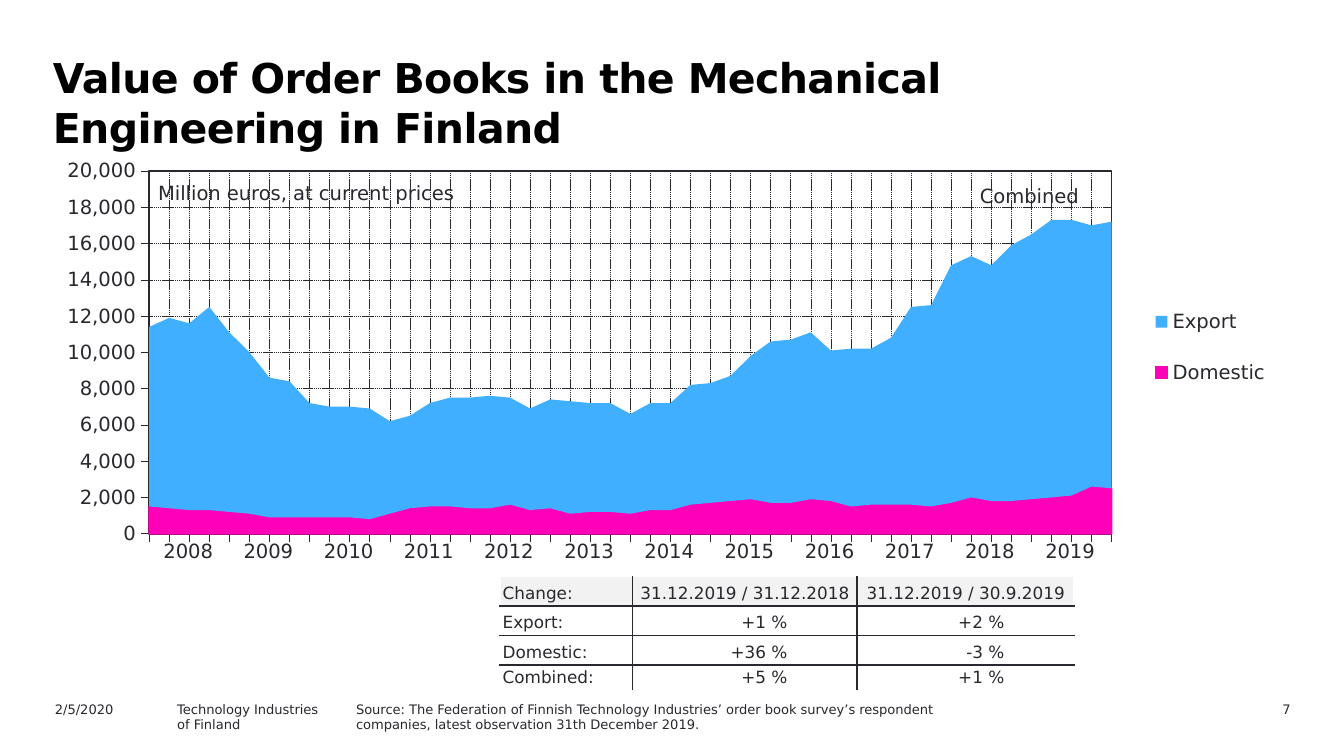
"""Build the slide on order books in Finnish mechanical engineering."""
from dataclasses import dataclass

import lxml.etree
import pptx
import pptx.chart.data
import pptx.dml.color
import pptx.enum.chart
import pptx.enum.dml
import pptx.enum.text
import pptx.oxml
import pptx.oxml.ns
import pptx.util

Cm = pptx.util.Cm
Pt = pptx.util.Pt
qn = pptx.oxml.ns.qn
ALIGN = pptx.enum.text.PP_ALIGN
ANCHOR = pptx.enum.text.MSO_ANCHOR
CHART = pptx.enum.chart


@dataclass(frozen=True)
class Theme:
    font: str = "DejaVu Sans"
    title: str = "000000"
    ink: str = "29282E"
    paper: str = "FFFFFF"
    header: str = "F2F2F2"
    domestic: str = "FF00B8"
    export: str = "40AFFF"
    title_size: float = 22
    label_size: float = 10.5
    table_size: float = 9
    footer_size: float = 7


THEME = Theme()
PLAIN_TABLE = "{2D5ABB26-0587-4C30-8999-92F81FD0307C}"
DOMESTIC = (
    1500, 1400, 1300, 1300, 1200, 1100, 900, 900, 900, 900, 900, 800, 1100,
    1400, 1500, 1500, 1400, 1400, 1600, 1300, 1400, 1100, 1200, 1200, 1100,
    1300, 1300, 1600, 1700, 1800, 1900, 1700, 1700, 1900, 1800, 1500, 1600,
    1600, 1600, 1500, 1700, 2000, 1800, 1800, 1900, 2000, 2100, 2600, 2500,
)
EXPORT = (
    9900, 10500, 10300, 11200, 9900, 8900, 7700, 7500, 6300, 6100, 6100, 6100,
    5100, 5100, 5700, 6000, 6100, 6200, 5900, 5600, 6000, 6200, 6000, 6000,
    5500, 5900, 5900, 6600, 6600, 6900, 7900, 8900, 9000, 9200, 8300, 8700,
    8600, 9200, 10900, 11100, 13100, 13300, 13000, 14100, 14600, 15300, 15200,
    14400, 14700,
)
CHANGES = (
    ("Change:", "31.12.2019 / 31.12.2018", "31.12.2019 / 30.9.2019"),
    ("Export:", "+1 %", "+2 %"),
    ("Domestic:", "+36 %", "-3 %"),
    ("Combined:", "+5 %", "+1 %"),
)


def assign(target, formats):
    for name, value in formats.items():
        setattr(target, name, value)


def rgb(color):
    return pptx.dml.color.RGBColor.from_string(color)


def style_font(font, size, color=THEME.ink, bold=False):
    assign(font, {"name": THEME.font, "size": Pt(size), "bold": bold})
    font.color.rgb = rgb(color)


def style_line(line, width, color=THEME.ink, dash=None):
    line.color.rgb = rgb(color)
    assign(line, {"width": Pt(width), "dash_style": dash})


def add_text(page, place, lines, size, color=THEME.ink, bold=False,
             spacing=0, wrap=True, **formats):
    box = page.shapes.add_textbox(*map(Cm, place))
    frame = box.text_frame
    frame.word_wrap = wrap
    for number, line in enumerate(lines):
        para = frame.add_paragraph() if number else frame.paragraphs[0]
        assign(para, formats)
        span = para.add_run()
        span.text = line
        style_font(span.font, size, color, bold)
        if spacing:
            span.font._element.set("spc", str(spacing))


def set_layout(parent, position, **fractions):
    for old in parent.findall(qn("c:layout")):
        parent.remove(old)
    layout = lxml.etree.Element(qn("c:layout"))
    manual = lxml.etree.SubElement(layout, qn("c:manualLayout"))
    values = {"xMode": "edge", "yMode": "edge", **fractions}
    if position == 0:
        values = {"layoutTarget": "inner", **values}
    for name, value in values.items():
        lxml.etree.SubElement(manual, qn(f"c:{name}")).set("val", str(value))
    parent.insert(position, layout)


def style_axis(axis):
    assign(axis, {"has_major_gridlines": True,
                  "major_tick_mark": CHART.XL_TICK_MARK.OUTSIDE,
                  "minor_tick_mark": CHART.XL_TICK_MARK.NONE})
    style_line(axis.format.line, 0.22)
    style_line(axis.major_gridlines.format.line, 0.25,
               dash=pptx.enum.dml.MSO_LINE.SQUARE_DOT)


def frame_plot(plot_area):
    plot_area.append(pptx.oxml.parse_xml(
        f'<c:spPr {pptx.oxml.ns.nsdecls("c", "a")}><a:noFill/>'
        f'<a:ln w="12700"><a:solidFill><a:srgbClr val="{THEME.ink}"/>'
        '</a:solidFill></a:ln></c:spPr>'))


def add_order_chart(page):
    data = pptx.chart.data.CategoryChartData()
    data.categories = [str(quarter + 1) for quarter in range(len(EXPORT))]
    data.add_series("Domestic", DOMESTIC)
    data.add_series("Export", EXPORT)
    chart = page.shapes.add_chart(
        CHART.XL_CHART_TYPE.AREA_STACKED,
        *map(Cm, (1.07, 3, 23.32, 7.75)), data).chart
    assign(chart, {"has_title": False, "has_legend": True})
    style_font(chart.font, THEME.label_size)
    chart.plots[0].vary_by_categories = False
    for series, color in zip(chart.plots[0].series,
                             (THEME.domestic, THEME.export)):
        series.format.fill.solid()
        series.format.fill.fore_color.rgb = rgb(color)
    style_line(chart.plots[0].series[0].format.line, 0.88, THEME.domestic)
    for axis in (chart.category_axis, chart.value_axis):
        style_axis(axis)
    chart.category_axis.tick_label_position = CHART.XL_TICK_LABEL_POSITION.NONE
    assign(chart.value_axis, {"minimum_scale": 0, "maximum_scale": 20000,
                              "major_unit": 2000})
    labels = chart.value_axis.tick_labels
    assign(labels, {"number_format": "#,##0", "number_format_is_linked": False})
    style_font(labels.font, THEME.label_size)
    assign(chart.legend, {"position": CHART.XL_LEGEND_POSITION.RIGHT,
                          "include_in_layout": False})
    style_font(chart.legend.font, THEME.label_size)
    plot_area = chart._chartSpace.chart.plotArea
    for crossing in plot_area.iter(qn("c:crossBetween")):
        crossing.set("val", "midCat")
    set_layout(plot_area, 0, x=0.075, y=0.03, w=0.78, h=0.885)
    set_layout(chart.legend._element, 1, x=0.87, y=0.3, w=0.13, h=0.32)
    frame_plot(plot_area)


def add_plain_table(page, left, top, widths, heights):
    table = page.shapes.add_table(
        len(heights), len(widths), Cm(left), Cm(top),
        Cm(sum(widths)), Cm(sum(heights))).table
    assign(table, {"first_row": False, "horz_banding": False})
    table._tbl.tblPr.find(qn("a:tableStyleId")).text = PLAIN_TABLE
    for column, width in zip(table.columns, widths):
        column.width = Cm(width)
    for row, height in zip(table.rows, heights):
        row.height = Cm(height)
    return table


def fill_cell(cell, text, size, align, fill=None, **formats):
    assign(cell, formats)
    para = cell.text_frame.paragraphs[0]
    para.alignment = align
    span = para.add_run()
    span.text = text
    style_font(span.font, size)
    if fill:
        cell.fill.solid()
        cell.fill.fore_color.rgb = rgb(fill)
    else:
        cell.fill.background()


def set_borders(cell, colors):
    for side, color in zip("LRTB", colors):
        cell._tc.get_or_add_tcPr().append(pptx.oxml.parse_xml(
            f'<a:ln{side} {pptx.oxml.ns.nsdecls("a")} w="12700"><a:solidFill>'
            f'<a:srgbClr val="{color}"/></a:solidFill></a:ln{side}>'))


def add_change_table(page):
    table = add_plain_table(page, 9.45, 10.9, (2.5, 4.25, 4.1),
                            (0.55, 0.56, 0.56, 0.46))
    last_row, last_column = len(CHANGES) - 1, len(CHANGES[0]) - 1
    for r, texts in enumerate(CHANGES):
        for c, text in enumerate(texts):
            cell = table.cell(r, c)
            outer = (c == 0, c == last_column, r == 0, r == last_row)
            set_borders(cell, [THEME.paper if edge else THEME.ink
                               for edge in outer])
            figure = r > 0 and c > 0
            align = (ALIGN.LEFT if c == 0 else
                     ALIGN.RIGHT if figure else ALIGN.CENTER)
            fill_cell(cell, text, THEME.table_size, align,
                      THEME.paper if r else THEME.header,
                      vertical_anchor=ANCHOR.BOTTOM,
                      margin_left=Cm(0.05), margin_top=Cm(0.05),
                      margin_right=Cm(1.32 if figure else 0.05),
                      margin_bottom=Cm(0.05))


def add_year_table(page):
    years = range(2008, 2020)
    table = add_plain_table(page, 2.8, 10.08, [18.18 / len(years)] * len(years),
                            [0.81])
    for cell, year in zip(table.rows[0].cells, years):
        fill_cell(cell, str(year), THEME.label_size, ALIGN.CENTER)


def main():
    deck = pptx.Presentation()
    assign(deck, {"slide_width": Cm(25.4), "slide_height": Cm(14.29)})
    page = deck.slides.add_slide(deck.slide_layouts[6])
    add_text(page, (0.75, 0.84, 22.2, 2.05),
             ["Value of Order Books in the Mechanical Engineering in Finland"],
             THEME.title_size, THEME.title, bold=True, spacing=-30,
             line_spacing=Pt(27))
    add_order_chart(page)
    add_text(page, (2.74, 3.3, 6.2, 0.69), ["Million euros, at current prices"],
             THEME.label_size, wrap=False)
    add_text(page, (18.27, 3.35, 2.69, 0.69), ["Combined"], THEME.label_size)
    add_change_table(page)
    add_year_table(page)
    footers = (
        (0.79, 2.54, ["2/5/2020"], ALIGN.LEFT),
        (3.1, 4.57, ["Technology Industries", "of Finland"], ALIGN.LEFT),
        (6.48, 12.7, ["Source: The Federation of Finnish Technology Industries’ "
                      "order book survey’s respondent companies, latest "
                      "observation 31th December 2019."], ALIGN.LEFT),
        (22.25, 2.39, ["7"], ALIGN.RIGHT),
    )
    for left, width, lines, align in footers:
        add_text(page, (left, 13.13, width, 0.66), lines, THEME.footer_size,
                 alignment=align)
    deck.save("out.pptx")


if __name__ == "__main__":
    main()
